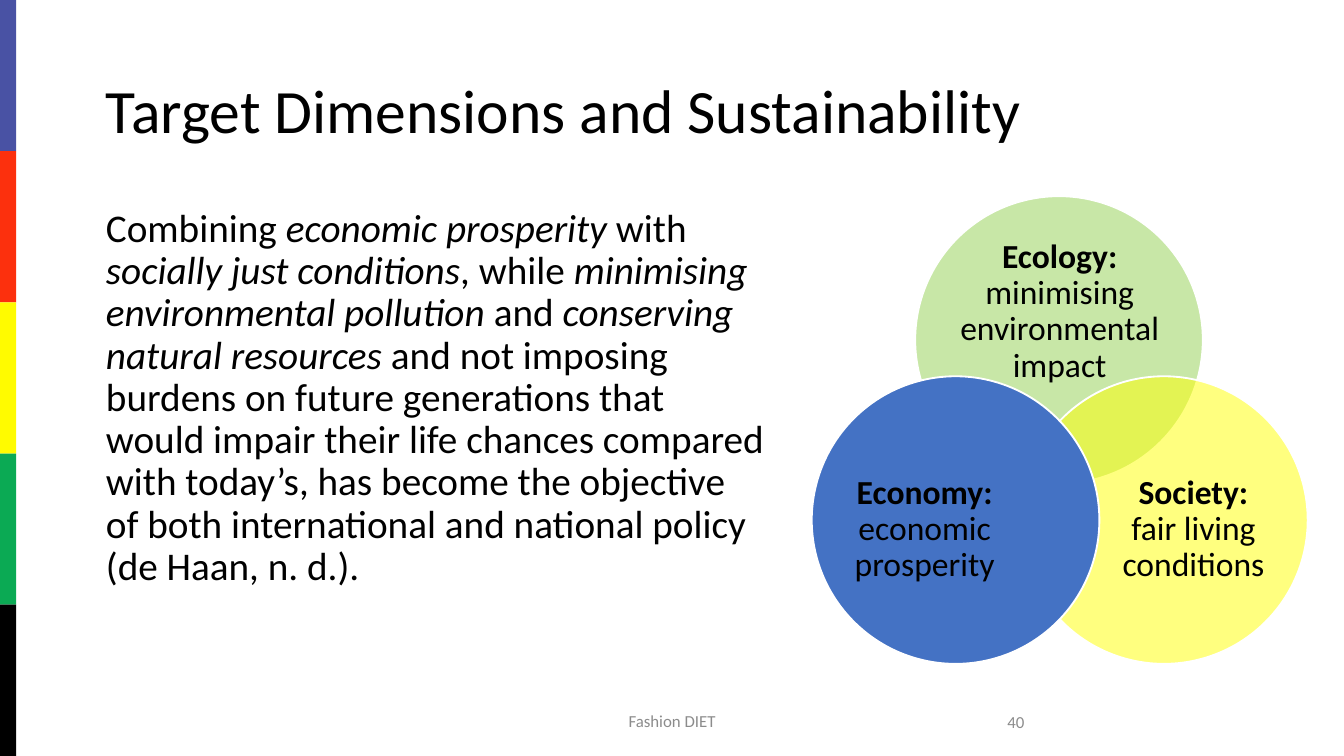
from pptx import Presentation
from pptx.dml.color import RGBColor
from pptx.enum.shapes import MSO_SHAPE as Shape
from pptx.enum.text import MSO_ANCHOR as Anchor, PP_ALIGN as Align
from pptx.oxml.ns import qn
from pptx.util import Inches, Pt
from lxml import etree

FONT = "Calibri"
BLACK, GREY, WHITE = "000000", "8C8C8C", "FFFFFF"
SLIDE_WIDTH = 10
SLIDE_HEIGHT = SLIDE_WIDTH * 9 / 16
STRIPES = ["4952A4", "FC300D", "FFFB00", "0BAA54", BLACK]
DIAMETER = 2.14

# Statement runs: (text, italic)
STATEMENT = [
    ("Combining ", False),
    ("economic prosperity ", True),
    ("with ", False),
    ("socially just conditions", True),
    (", while ", False),
    ("minimising environmental pollution", True),
    (" and", False),
    (" conserving natural resources", True),
    (" and not imposing burdens on future generations that would impair "
     "their life chances compared with today’s, has become the objective "
     "of both international and national policy (de Haan, n. d.).", False),
]

# Dimensions: circle corner, colour, opacity, label box, heading, goal
DIMENSIONS = [
    ((6.81, 1.46), "92D050", 50, (7.1, 1.84, 1.57, 0.96),
     "Ecology:", " minimising environmental impact"),
    ((7.59, 2.8), "FFFF00", 50, (8.24, 3.35, 1.28, 1.18),
     "Society:\v", "fair living conditions"),
    ((6.04, 2.8), "4472C4", 100, (6.24, 3.35, 1.28, 1.18),
     "Economy:", " economic prosperity"),
]


def rgb(hex_colour):
    return RGBColor.from_string(hex_colour)


def add_filled(slide, preset, box, colour, opacity=100):
    shape = slide.shapes.add_shape(preset, *map(Inches, box))
    shape.shadow.inherit = False
    shape.fill.solid()
    shape.fill.fore_color.rgb = rgb(colour)
    shape.line.fill.background()
    if opacity < 100:
        fill_colour = shape.fill._xPr.find(qn("a:solidFill"))[0]
        alpha = etree.SubElement(fill_colour, qn("a:alpha"))
        alpha.set("val", str(opacity * 1000))
    return shape


def add_text(slide, box, runs, size, colour=BLACK, align=Align.LEFT,
             anchor=Anchor.MIDDLE, line_spacing=0.9, inset=None):
    """Runs are (text, bold, italic)."""
    frame = slide.shapes.add_textbox(*map(Inches, box)).text_frame
    frame.word_wrap = True
    frame.vertical_anchor = anchor
    if inset is not None:
        frame.margin_left = frame.margin_right = Inches(inset)
        frame.margin_top = frame.margin_bottom = Inches(inset)
    paragraph = frame.paragraphs[0]
    paragraph.alignment = align
    paragraph.line_spacing = line_spacing
    for text, bold, italic in runs:
        # A vertical tab marks a line break after the run
        run = paragraph.add_run()
        run.text = text.rstrip("\v")
        font = run.font
        font.name, font.size = FONT, Pt(size)
        font.bold, font.italic = bold, italic
        font.color.rgb = rgb(colour)
        if text.endswith("\v"):
            paragraph.add_line_break()


def add_stripes(slide):
    height = SLIDE_HEIGHT / len(STRIPES)
    for i, colour in enumerate(STRIPES):
        add_filled(slide, Shape.RECTANGLE, (0, i * height, 0.12, height), colour)


def add_dimension(slide, corner, colour, opacity, label_box, heading, goal):
    circle = add_filled(slide, Shape.OVAL, (*corner, DIAMETER, DIAMETER),
                        colour, opacity)
    circle.line.color.rgb = rgb(WHITE)
    circle.line.width = Pt(1)
    add_text(slide, label_box, [(heading, True, False), (goal, False, False)],
             18, align=Align.CENTER, inset=0)


def main():
    deck = Presentation()
    deck.slide_width = Inches(SLIDE_WIDTH)
    deck.slide_height = Inches(SLIDE_HEIGHT)
    slide = deck.slides.add_slide(deck.slide_layouts[6])

    # Colour band on the left edge
    add_stripes(slide)

    # Title and statement
    add_text(slide, (0.69, 0.3, 8.62, 1.09),
             [("Target Dimensions and Sustainability", False, False)], 33)
    add_text(slide, (0.69, 1.5, 5.1, 3.57),
             [(text, False, italic) for text, italic in STATEMENT],
             21, anchor=Anchor.TOP)

    # Footer and slide number
    add_text(slide, (3.31, 5.21, 3.38, 0.3), [("Fashion DIET", False, False)],
             9, GREY, Align.CENTER, line_spacing=1.0)
    add_text(slide, (5.47, 5.22, 2.25, 0.3), [("40", False, False)],
             9, GREY, Align.RIGHT, line_spacing=1.0)

    # Overlapping circles of the three dimensions
    for dimension in DIMENSIONS:
        add_dimension(slide, *dimension)

    deck.save("out.pptx")


if __name__ == "__main__":
    main()
